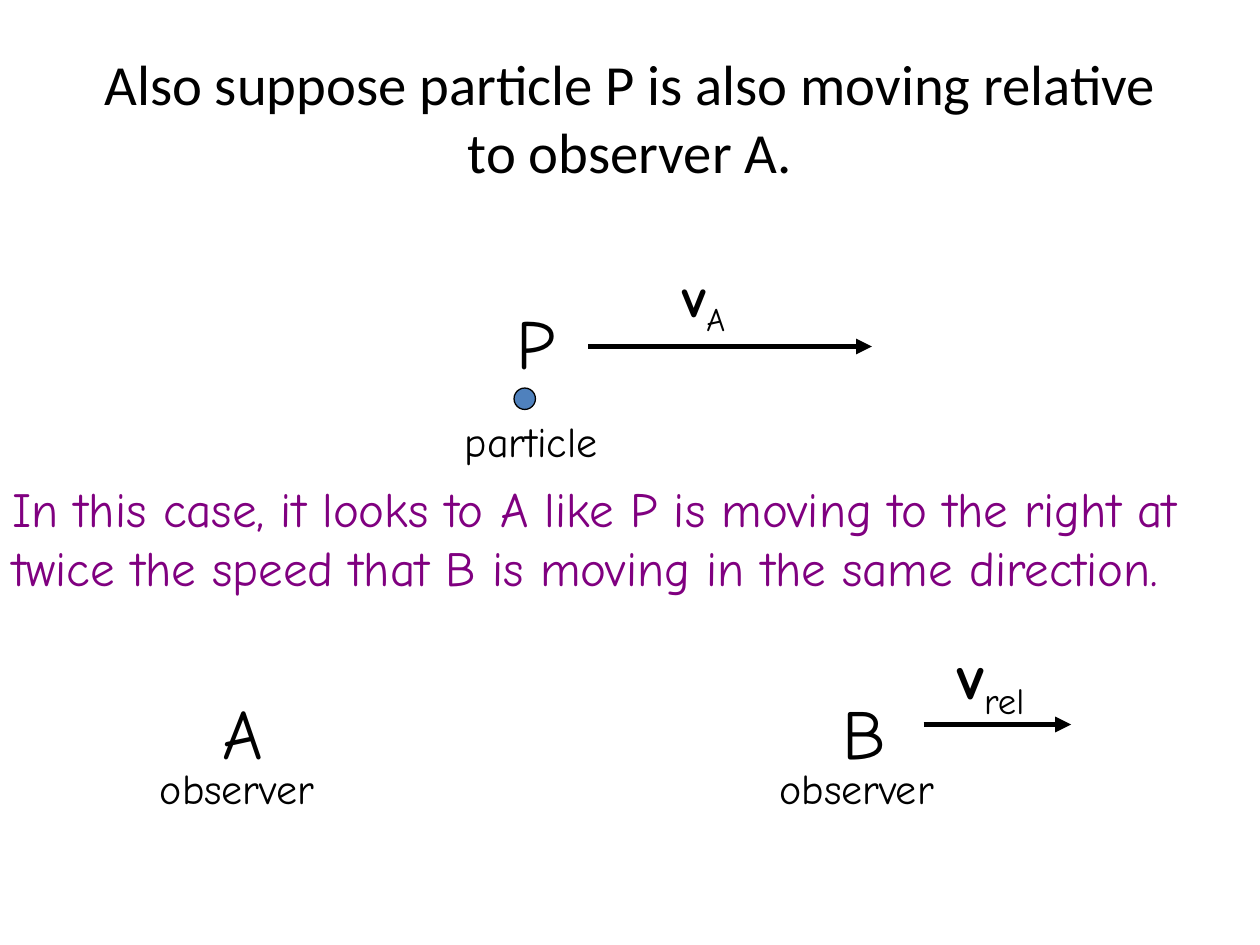
from pptx import Presentation
from pptx.dml.color import RGBColor
from pptx.enum.shapes import MSO_CONNECTOR, MSO_SHAPE
from pptx.enum.text import MSO_ANCHOR, PP_ALIGN
from pptx.oxml.ns import qn
from pptx.util import Inches, Pt
from lxml.etree import SubElement


def paint(color):
    return RGBColor.from_string(color)


class Sketch:
    ink = "000000"
    hand = "Comic Neue"

    def __init__(self, slide):
        self.slide = slide

    def style(self, para, size, color=ink, name=hand, bold=False):
        font = para.font
        font.size, font.name, font.bold = Pt(size), name, bold
        font.color.rgb = paint(color)

    def title(self, text):
        head = self.slide.shapes.title
        head.left, head.top = Inches(0.5), Inches(0.3)
        head.width, head.height = Inches(9), Inches(1.25)
        frame = head.text_frame
        frame.text = text
        frame.vertical_anchor = MSO_ANCHOR.MIDDLE
        para = frame.paragraphs[0]
        para.alignment = PP_ALIGN.CENTER
        self.style(para, 32.4, name="Calibri")

    def text(self, text, x, y, w, h, size, color=ink, wrap=False):
        box = self.slide.shapes.add_textbox(
            Inches(x), Inches(y), Inches(w), Inches(h))
        frame = box.text_frame
        frame.word_wrap = wrap
        frame.text = text
        para = frame.paragraphs[0]
        self.style(para, size, color)
        return para

    def vector(self, sub, x, y, w, h, size):
        """Label a velocity: a bold v with a plain subscript."""
        para = self.text("v", x, y, w, h, size)
        para.runs[0].font.bold = True
        run = para.add_run()
        run.text = sub
        run._r.get_or_add_rPr().set("baseline", "-25000")

    def arrow(self, start, end, y):
        line = self.slide.shapes.add_connector(
            MSO_CONNECTOR.STRAIGHT,
            Inches(start), Inches(y), Inches(end), Inches(y))
        line.line.color.rgb = paint(self.ink)
        line.line.width = Pt(3)
        SubElement(line.line._get_or_add_ln(), qn("a:tailEnd"), type="triangle")
        SubElement(line._element.spPr, qn("a:effectLst"))

    def dot(self, x, y, size, color):
        dot = self.slide.shapes.add_shape(
            MSO_SHAPE.OVAL, Inches(x), Inches(y), Inches(size), Inches(size))
        dot.shadow.inherit = False
        dot.fill.solid()
        dot.fill.fore_color.rgb = paint(color)
        dot.line.color.rgb = paint(self.ink)
        dot.line.width = Pt(0.75)

    def viewer(self, name, x, w):
        """Draw an observer's letter with its caption below."""
        self.text(name, x + 0.5, 5.42, w, 0.77, 40)
        self.text("observer", x, 6, 1.58, 0.5, 24)


def main():
    deck = Presentation()
    deck.slide_width, deck.slide_height = Inches(10), Inches(7.5)
    sketch = Sketch(deck.slides.add_slide(deck.slide_layouts[5]))

    sketch.title("Also suppose particle P is also moving relative to observer A.")

    sketch.dot(4.08, 3.08, 0.17, "4F81BD")
    sketch.text("P", 4, 2.33, 0.49, 0.77, 40)
    sketch.text("particle", 3.59, 3.25, 1.41, 0.5, 24)

    sketch.viewer("A", 1.17, 0.61)
    sketch.viewer("B", 6.09, 0.55)

    sketch.arrow(7.33, 8.5, 5.75)
    sketch.vector("rel", 7.5, 5, 0.88, 0.7, 36)
    sketch.arrow(4.67, 6.92, 2.75)
    sketch.vector("A", 5.32, 2.03, 0.63, 0.63, 32)

    sketch.text(
        "In this case, it looks to A like P is moving to the right at "
        "twice the speed that B is moving in the same direction.",
        0, 3.75, 10, 1.5, 28, "800080", wrap=True)

    deck.save("out.pptx")


if __name__ == "__main__":
    main()
